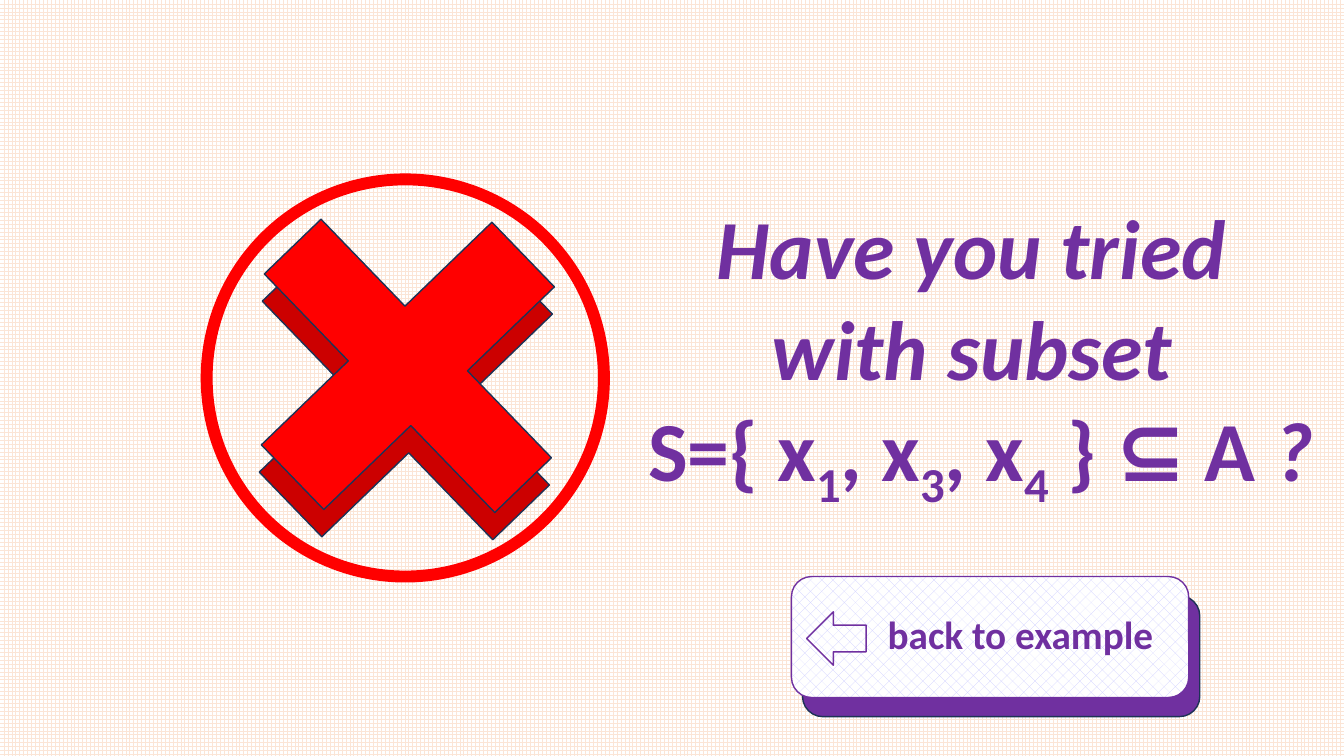
from lxml import etree
from pptx import Presentation
from pptx.dml.color import RGBColor
from pptx.enum import dml, shapes, text
from pptx.oxml.ns import qn
from pptx.util import Inches, Pt

PURPLE, RED, DARK_RED, NAVY = "7030A0", "FF0000", "CC0000", "1E3256"
FONT = "Calibri"
SHAPE = shapes.MSO_SHAPE


def color(hex_string):
    return RGBColor.from_string(hex_string)


def set_pattern(fill, pattern, fore):
    fill.patterned()
    fill.pattern = pattern
    fill.fore_color.rgb = color(fore)
    fill.back_color.rgb = color("FFFFFF")


def add_preset(slide, kind, left, top, width, height, line, fill=None, weight=1):
    preset = slide.shapes.add_shape(
        kind, Inches(left), Inches(top), Inches(width), Inches(height))
    preset.shadow.inherit = False
    if fill:
        preset.fill.solid()
        preset.fill.fore_color.rgb = color(fill)
    else:
        preset.fill.background()
    preset.line.color.rgb = color(line)
    preset.line.width = Pt(weight)
    return preset


def style_paragraph(paragraph, size):
    paragraph.alignment = text.PP_ALIGN.CENTER
    font = paragraph.font
    font.name, font.size, font.bold = FONT, Pt(size), True
    font.color.rgb = color(PURPLE)


def add_run(paragraph, words, slanted=False, subscript=False):
    run = paragraph.add_run()
    run.text = words
    run.font.italic = slanted
    properties = run.font._element
    if subscript:
        properties.set("baseline", "-25000")
    if slanted:
        # Slanted words carry a thin outline
        outline = etree.Element(qn("a:ln"), w=str(Pt(1)))
        solid = etree.SubElement(outline, qn("a:solidFill"))
        etree.SubElement(solid, qn("a:srgbClr"), val=PURPLE)
        properties.insert(0, outline)


def add_question(slide, left, top, width, height):
    question = slide.shapes.add_textbox(
        Inches(left), Inches(top), Inches(width), Inches(height))
    frame = question.text_frame
    frame.word_wrap = False
    frame.auto_size = text.MSO_AUTO_SIZE.SHAPE_TO_FIT_TEXT
    first, second, formula = (
        frame.paragraphs[0], frame.add_paragraph(), frame.add_paragraph())
    for paragraph in (first, second, formula):
        style_paragraph(paragraph, 60)
    add_run(first, "Have you tried ", slanted=True)
    add_run(second, "with subset ", slanted=True)
    # Set formula: each element is followed by its index
    for words, index in (("S={ x", "1"), (", x", "3"), (", x", "4")):
        add_run(formula, words)
        add_run(formula, index, subscript=True)
    add_run(formula, " } ⊆ A ")
    add_run(formula, "?", slanted=True)


def add_wrong_mark(slide, left, top, size):
    add_preset(slide, SHAPE.FLOWCHART_CONNECTOR, left, top, size, size, RED, weight=8.5)
    # Dark cross behind, bright cross in front
    for dx, dy, fill in ((0.33, 0.53, DARK_RED), (0.35, 0.26, RED)):
        cross = add_preset(slide, SHAPE.CROSS, left + dx, top + dy, 3.29, 3.18, NAVY, fill)
        cross.adjustments[0] = 0.377
        cross.rotation = 46


def add_back_button(slide, left, top, width, height):
    add_preset(slide, SHAPE.ROUNDED_RECTANGLE, left + 0.11, top + 0.19,
               width, height, NAVY, PURPLE)
    button = add_preset(slide, SHAPE.ROUNDED_RECTANGLE, left, top, width, height, PURPLE)
    set_pattern(button.fill, dml.MSO_PATTERN.PERCENT_25, "CCCCFF")
    # Label, moved right to clear the arrow
    frame = button.text_frame
    frame.margin_left = Inches(0.7)
    frame.vertical_anchor = text.MSO_ANCHOR.MIDDLE
    label = frame.paragraphs[0]
    label.line_spacing = 0.9
    label.space_before = Pt(10)
    style_paragraph(label, 28)
    add_run(label, "back to example")
    add_preset(slide, SHAPE.LEFT_ARROW, left + 0.15, top + 0.35, 0.59, 0.53, PURPLE)


def main():
    deck = Presentation()
    deck.slide_width, deck.slide_height = Inches(13.33), Inches(7.5)
    slide = deck.slides.add_slide(deck.slide_layouts[6])
    set_pattern(slide.background.fill, dml.MSO_PATTERN.LARGE_GRID, "FBE5D6")
    add_question(slide, 6.23, 1.89, 7, 3.13)
    add_wrong_mark(slide, 2.05, 1.78, 3.94)
    add_back_button(slide, 7.85, 5.72, 3.94, 1.2)
    deck.save("out.pptx")


if __name__ == "__main__":
    main()
